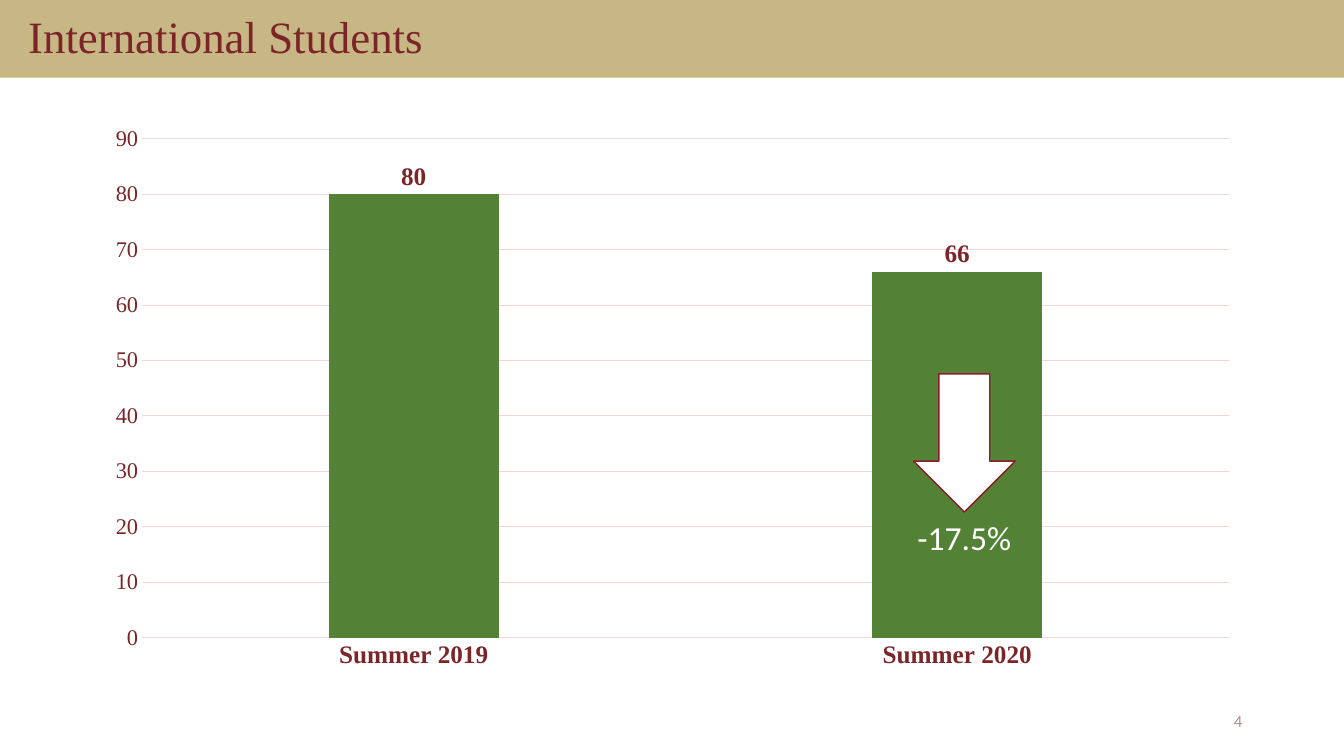
from collections import namedtuple

from pptx import Presentation
from pptx.chart.data import CategoryChartData
from pptx.dml.color import RGBColor
from pptx.enum.chart import XL_CHART_TYPE, XL_LABEL_POSITION, XL_TICK_MARK
from pptx.enum.shapes import MSO_SHAPE
from pptx.enum.text import MSO_ANCHOR, MSO_AUTO_SIZE, PP_ALIGN
from pptx.util import Inches, Pt

COLUMNS = XL_CHART_TYPE.COLUMN_CLUSTERED
OUTSIDE_END = XL_LABEL_POSITION.OUTSIDE_END
NO_TICK = XL_TICK_MARK.NONE
RECTANGLE, DOWN_ARROW = MSO_SHAPE.RECTANGLE, MSO_SHAPE.DOWN_ARROW
TOP, MIDDLE = MSO_ANCHOR.TOP, MSO_ANCHOR.MIDDLE
LEFT, CENTER, RIGHT = PP_ALIGN.LEFT, PP_ALIGN.CENTER, PP_ALIGN.RIGHT
NO_AUTO_SIZE = MSO_AUTO_SIZE.NONE

COLORS = {
    "gold": "C7B784",
    "garnet": "7C2529",
    "outline": "8E1A2A",
    "grid": "F3D7D8",
    "green": "538135",
    "white": "FFFFFF",
    "muted": "AA8E8E",
}
SERIF, SANS = "Times New Roman", "Calibri"
Box = namedtuple("Box", "left top width height")


def color(name):
    return RGBColor.from_string(COLORS[name])


def within(box, left, top, width, height):
    """Return a box given in percent of the enclosing box."""
    return Box(
        round(box.left + box.width * left / 100),
        round(box.top + box.height * top / 100),
        round(box.width * width / 100),
        round(box.height * height / 100),
    )


def set_font(font, name, size, color_name, bold=False):
    font.name = name
    font.size = Pt(size)
    font.bold = bold
    font.color.rgb = color(color_name)


def add_block(page, kind, box, fill, line=None):
    block = page.shapes.add_shape(kind, *box)
    block.shadow.inherit = False
    block.fill.solid()
    block.fill.fore_color.rgb = color(fill)
    if line:
        block.line.color.rgb = color(line)
        block.line.width = Pt(1)
    else:
        block.line.fill.background()


def add_label(page, box, text, size, color_name, align, anchor, wrap):
    frame = page.shapes.add_textbox(*box).text_frame
    frame.word_wrap = wrap
    frame.vertical_anchor = anchor
    para = frame.paragraphs[0]
    para.text = text
    para.alignment = align
    set_font(para.font, SANS, size, color_name)


def add_header(page, box, text):
    add_block(page, RECTANGLE, box, "gold")
    title = page.shapes.title
    title.left, title.top, title.width, title.height = within(box, 1.35, 12.99, 86.27, 85.71)
    tree = page.shapes._spTree
    tree.remove(title._element)
    tree.append(title._element)
    frame = title.text_frame
    frame.text = text
    frame.auto_size = NO_AUTO_SIZE
    frame.vertical_anchor = TOP
    para = frame.paragraphs[0]
    para.alignment = LEFT
    para.line_spacing = 0.9
    set_font(para.font, SERIF, 32, "garnet")


def style_axis(axis, size, bold):
    axis.major_tick_mark = axis.minor_tick_mark = NO_TICK
    set_font(axis.tick_labels.font, SERIF, size, "garnet", bold)


def style_line(line):
    line.color.rgb = color("grid")
    line.width = Pt(0.75)


def add_student_chart(page, box):
    data = CategoryChartData()
    data.categories = ["Summer 2019", "Summer 2020"]
    data.add_series("Series 1", [80, 66])
    chart = page.shapes.add_chart(COLUMNS, *box, data).chart
    chart.has_title = chart.has_legend = False
    set_font(chart.font, SANS, 10, "garnet")

    style_axis(chart.category_axis, 18, True)
    style_line(chart.category_axis.format.line)
    value_axis = chart.value_axis
    style_axis(value_axis, 16, False)
    value_axis.format.line.fill.background()
    value_axis.minimum_scale, value_axis.maximum_scale = 0, 90
    value_axis.major_unit = 10
    style_line(value_axis.major_gridlines.format.line)

    plot = chart.plots[0]
    plot.vary_by_categories = False
    plot.gap_width, plot.overlap = 219, -27
    students = plot.series[0]
    students.format.fill.solid()
    students.format.fill.fore_color.rgb = color("green")
    labels = students.data_labels
    labels.show_value = True
    labels.position = OUTSIDE_END
    set_font(labels.font, SERIF, 18, "garnet", True)


def add_change(page, box, text):
    add_label(page, within(box, 68.61, 70.23, 13.13, 17.29), text, 24, "white", CENTER, TOP, False)
    add_block(page, DOWN_ARROW, within(box, 70.78, 45.81, 8.78, 24.42), "white", "outline")


def main():
    deck = Presentation()
    deck.slide_width, deck.slide_height = Inches(13.33), Inches(7.5)
    page = deck.slides.add_slide(deck.slide_layouts[5])
    slide = Box(0, 0, deck.slide_width, deck.slide_height)
    chart_box = within(slide, 6.9, 15.2, 86.27, 74.8)

    add_header(page, within(slide, 0, 0, 100, 10.27), "International Students")
    add_student_chart(page, chart_box)
    add_change(page, chart_box, "-17.5%")
    number_box = within(slide, 70.67, 92.67, 22.5, 5.33)
    add_label(page, number_box, "4", 12, "muted", RIGHT, MIDDLE, True)
    deck.save("out.pptx")


if __name__ == "__main__":
    main()
